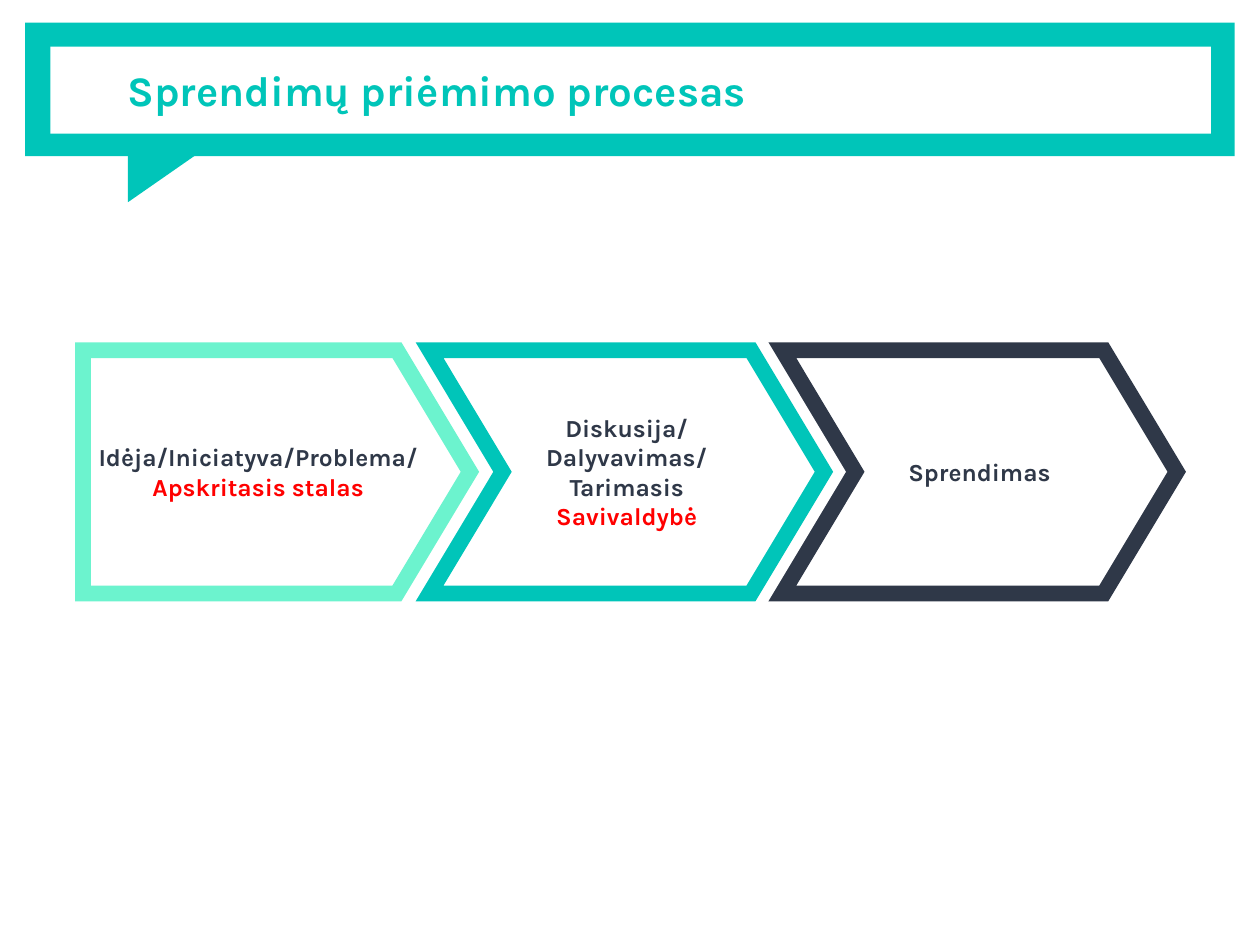
from lxml import etree
from pptx import Presentation
from pptx import util as u
from pptx.dml.color import RGBColor
from pptx.enum import shapes, text
from pptx.oxml.ns import qn

TEAL = RGBColor(0x00, 0xC5, 0xB9)
MINT = RGBColor(0x6C, 0xF3, 0xCE)
NAVY = RGBColor(0x2F, 0x38, 0x48)
RED = RGBColor(0xFF, 0x00, 0x00)
WHITE = RGBColor(0xFF, 0xFF, 0xFF)
KIND = shapes.MSO_SHAPE
COLUMNS, ROWS = 100, 75


class Board:
    font = "Karla"
    inset = u.Inches(0.1)

    def __init__(self, deck):
        self.column = deck.slide_width / COLUMNS
        self.row = deck.slide_height / ROWS
        self.page = deck.slides.add_slide(deck.slide_layouts[5])

    def place(self, left, top, width, height):
        return (round(left * self.column), round(top * self.row),
                round(width * self.column), round(height * self.row))

    def shape(self, kind, area, fill=None):
        box = self.page.shapes.add_shape(kind, *self.place(*area))
        box.shadow.inherit = False
        if fill is None:
            box.fill.background()
        else:
            box.fill.solid()
            box.fill.fore_color.rgb = fill
        box.line.fill.background()
        return box

    def label(self, box, lines, size, align):
        frame = box.text_frame
        frame.word_wrap = True
        frame.auto_size = text.MSO_AUTO_SIZE.NONE
        frame.vertical_anchor = text.MSO_ANCHOR.MIDDLE
        frame.margin_left = frame.margin_right = self.inset
        frame.margin_top = frame.margin_bottom = self.inset
        for index, (words, color) in enumerate(lines):
            para = frame.add_paragraph() if index else frame.paragraphs[0]
            para.alignment = align
            span = para.add_run()
            span.text = words
            span.font.name = self.font
            span.font.size = u.Pt(size)
            span.font.bold = True
            span.font.color.rgb = color

    def title(self, words, area, color):
        box = self.page.shapes.title
        box.left, box.top, box.width, box.height = self.place(*area)
        self.page.shapes._spTree.append(box._element)
        self.label(box, [(words, color)], 24, text.PP_ALIGN.LEFT)

    def step(self, kind, area, color, lines):
        box = self.shape(kind, area)
        box.adjustments[0] = 0.3
        box.line.color.rgb = color
        box.line.width = u.Pt(9)
        outline = box.line._get_or_add_ln()
        etree.SubElement(outline, qn("a:miter"), lim="800000")
        self.label(box, lines, 14, text.PP_ALIGN.CENTER)


def main():
    deck = Presentation()
    deck.slide_width, deck.slide_height = u.Inches(10), u.Inches(7.5)
    board = Board(deck)

    board.shape(KIND.RECTANGLE, (2, 1.8, 96, 10.6), TEAL)
    tail = board.shape(KIND.RIGHT_TRIANGLE, (11.2, 10.2, 4.8, 6.9), TEAL)
    tail.rotation = 90
    board.shape(KIND.RECTANGLE, (4, 3.7, 92.1, 6.9), WHITE)

    steps = [
        (KIND.PENTAGON, 6.6, 30.7, MINT,
         [("Idėja/Iniciatyva/Problema/", NAVY), ("Apskritasis stalas", RED)]),
        (KIND.CHEVRON, 34.1, 31.3, TEAL,
         [("Diskusija/Dalyvavimas/Tarimasis", NAVY), ("Savivaldybė", RED)]),
        (KIND.CHEVRON, 62.1, 31.3, NAVY, [("Sprendimas", NAVY)]),
    ]
    for kind, left, width, color, lines in steps:
        board.step(kind, (left, 27.8, width, 19.3), color, lines)

    board.title("Sprendimų priėmimo procesas", (9.1, 1.8, 87, 10.6), TEAL)
    deck.save("out.pptx")


if __name__ == "__main__":
    main()
